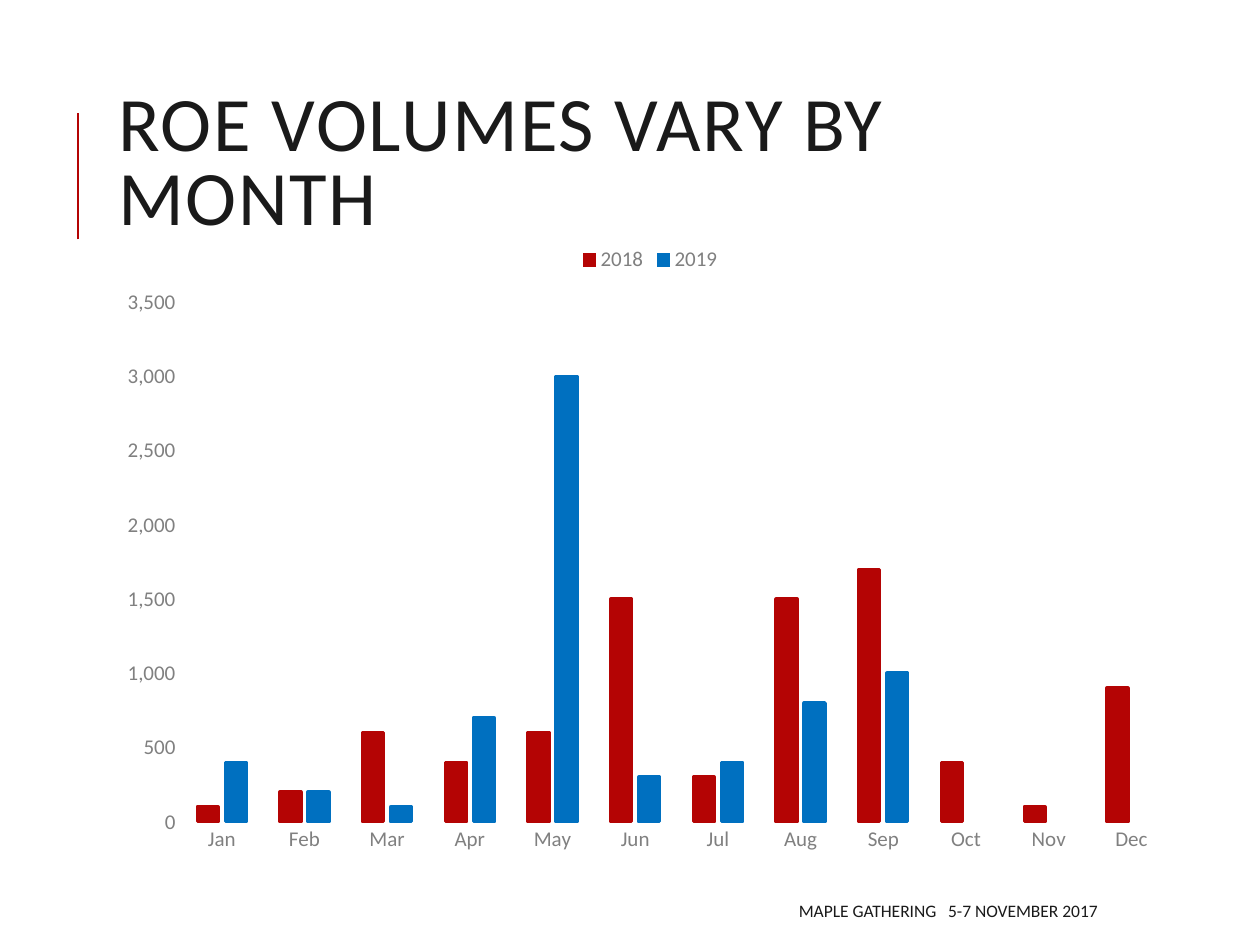
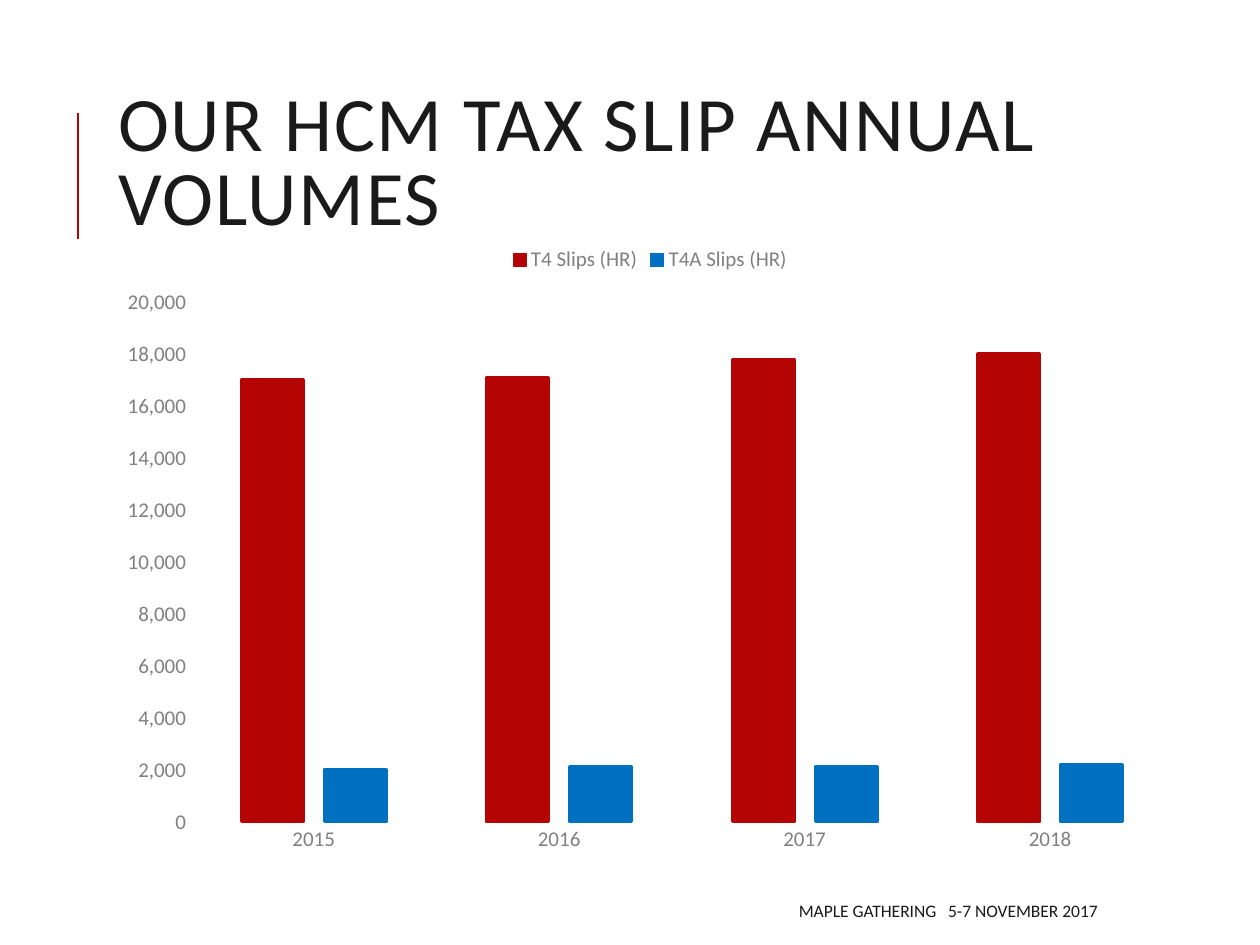
"""Build two slides that compare payroll volumes in column charts."""
from dataclasses import dataclass

from lxml import etree
from pptx import Presentation
from pptx.chart.data import CategoryChartData
from pptx.dml.color import RGBColor
from pptx.enum.chart import XL_CHART_TYPE, XL_LEGEND_POSITION, XL_TICK_MARK
from pptx.enum.shapes import MSO_CONNECTOR
from pptx.enum.text import MSO_ANCHOR, PP_ALIGN
from pptx.oxml.ns import qn
from pptx.util import Inches, Pt

COLUMN = XL_CHART_TYPE.COLUMN_CLUSTERED
TOP = XL_LEGEND_POSITION.TOP
NO_TICK = XL_TICK_MARK.NONE
STRAIGHT = MSO_CONNECTOR.STRAIGHT
MIDDLE = MSO_ANCHOR.MIDDLE
LEFT, RIGHT = PP_ALIGN.LEFT, PP_ALIGN.RIGHT

FACE = "Calibri"
RED, BLUE, INK, GREY, BLACK = "B40404", "0070C0", "1A1A1A", "808080", "000000"


@dataclass(frozen=True)
class Style:
    """Hold the look and place of a text box."""
    box: tuple[float, float, float, float]
    size: int
    align: PP_ALIGN
    lead: float


@dataclass(frozen=True)
class Piece:
    """Hold a run of text and its letter spacing in points."""
    text: str
    space: float = 0


@dataclass(frozen=True)
class Page:
    """Hold the title and chart data of one slide."""
    title: str
    labels: list[str]
    series: dict[str, list[int | None]]
    peak: int
    step: int


TITLE = Style((0.84, 0.5, 7.97, 1.64), 44, LEFT, 0.8)
FOOTER = Style((3.97, 7.08, 4.84, 0.3), 10, RIGHT, 1.0)
CHART_BOX = (0.84, 1.85, 8.64, 5.01)
CREDIT = [Piece("MAPLE GATHERING"), Piece(" ", 4.5), Piece("5-7 NOVEMBER 2017")]

PAGES = [
    Page(
        "ROE VOLUMES VARY BY MONTH",
        "Jan Feb Mar Apr May Jun Jul Aug Sep Oct Nov Dec".split(),
        {
            "2018": [100, 200, 600, 400, 600, 1500, 300, 1500, 1700, 400, 100, 900],
            "2019": [400, 200, 100, 700, 3000, 300, 400, 800, 1000, None, None, None],
        },
        3500, 500,
    ),
    Page(
        "OUR HCM TAX SLIP ANNUAL VOLUMES",
        ["2015", "2016", "2017", "2018"],
        {
            "T4 Slips (HR)": [17000, 17100, 17800, 18000],
            "T4A Slips (HR)": [2000, 2100, 2100, 2200],
        },
        20000, 2000,
    ),
]


def color(code: str) -> RGBColor:
    """Turn a hex string into a colour."""
    return RGBColor.from_string(code)


def apply(item, values: dict) -> None:
    """Set each named value on an item."""
    for name, value in values.items():
        setattr(item, name, value)


def set_font(font, size: int, code: str) -> None:
    """Set the face, size and colour of a font."""
    apply(font, {"name": FACE, "size": Pt(size)})
    font.color.rgb = color(code)


def add_text(slide, style: Style, pieces: list[Piece]) -> None:
    """Write a line of text pieces in a box."""
    frame = slide.shapes.add_textbox(*map(Inches, style.box)).text_frame
    apply(frame, {"word_wrap": True, "vertical_anchor": MIDDLE})
    para = frame.paragraphs[0]
    apply(para, {"alignment": style.align, "line_spacing": style.lead})
    for piece in pieces:
        run = para.add_run()
        run.text = piece.text
        set_font(run.font, style.size, INK)
        if piece.space:
            run._r.get_or_add_rPr().set("spc", str(round(piece.space * 100)))


def add_rule(slide) -> None:
    """Draw the red rule beside the title."""
    x = Inches(0.62)
    rule = slide.shapes.add_connector(STRAIGHT, x, Inches(1.9), x, Inches(0.9))
    rule.line.color.rgb = color(RED)
    rule.line.width = Pt(1.5)
    etree.SubElement(rule._element.spPr, qn("a:effectLst"))


def add_chart(slide, page: Page) -> None:
    """Draw the column chart of a page."""
    data = CategoryChartData(number_format="#,##0")
    data.categories = page.labels
    for name, values in page.series.items():
        data.add_series(name, values)
    chart = slide.shapes.add_chart(COLUMN, *map(Inches, CHART_BOX), data).chart
    apply(chart, {"has_title": False, "has_legend": True})
    set_font(chart.font, 10, BLACK)
    apply(chart.legend, {"position": TOP, "include_in_layout": False})
    set_font(chart.legend.font, 12, GREY)

    for axis in (chart.category_axis, chart.value_axis):
        apply(axis, {
            "major_tick_mark": NO_TICK,
            "minor_tick_mark": NO_TICK,
            "has_major_gridlines": False,
        })
        axis.format.line.fill.background()
        set_font(axis.tick_labels.font, 12, GREY)
    scale = {"minimum_scale": 0, "maximum_scale": page.peak, "major_unit": page.step}
    apply(chart.value_axis, scale)
    marks = {"number_format": "#,##0", "number_format_is_linked": False}
    apply(chart.value_axis.tick_labels, marks)

    plot = chart.plots[0]
    apply(plot, {"gap_width": 164, "overlap": -35, "vary_by_categories": False})
    for bars, code in zip(plot.series, (RED, BLUE)):
        bars.format.fill.solid()
        bars.format.fill.fore_color.rgb = color(code)
        bars.format.line.color.rgb = color(code)
        bars.format.line.width = Pt(2)


def main() -> None:
    """Build and save the slides."""
    deck = Presentation()
    apply(deck, {"slide_width": Inches(10), "slide_height": Inches(7.5)})
    for page in PAGES:
        slide = deck.slides.add_slide(deck.slide_layouts[6])
        add_rule(slide)
        add_text(slide, TITLE, [Piece(page.title, 1)])
        add_chart(slide, page)
        add_text(slide, FOOTER, CREDIT)
    deck.save("out.pptx")


if __name__ == "__main__":
    main()
